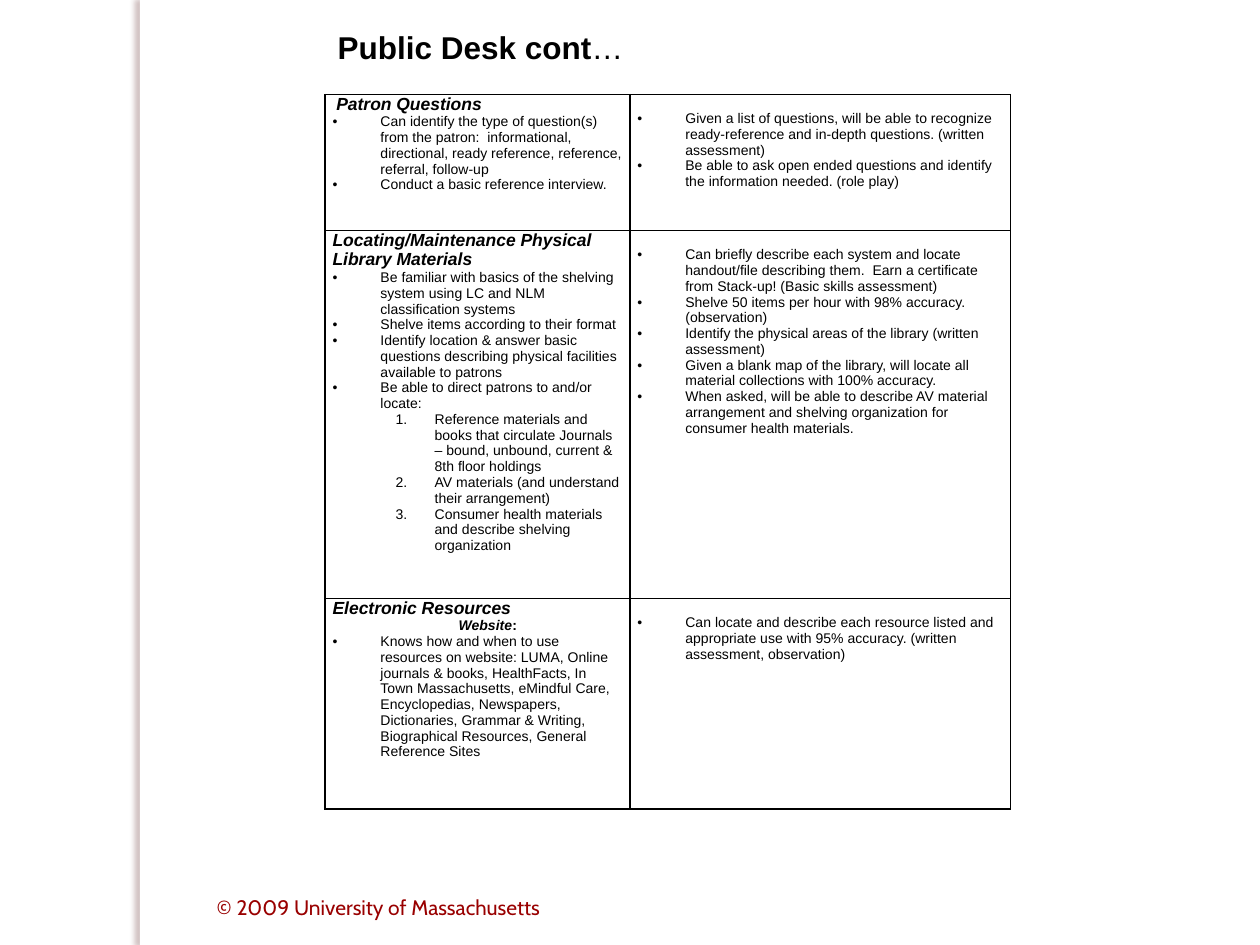
import dataclasses

import lxml.etree
import pptx
import pptx.dml.color
import pptx.enum.shapes
import pptx.enum.text
import pptx.oxml.ns
import pptx.util

Inches = pptx.util.Inches
qn = pptx.oxml.ns.qn


@dataclasses.dataclass(frozen=True)
class Theme:
    ink: str = "000000"
    paper: str = "FFFFFF"
    red: str = "990000"
    shade: str = "511616"
    font: str = "Arial"
    credit: str = "Cabin"
    title: int = 18
    foot: int = 12
    head: int = 10
    body: int = 8


# Paragraph kinds: left margin, first-line indent, bullet tag and its values
KINDS = {
    "plain": (0, 0, None, {}),
    "inset": (0.03, 0, None, {}),
    "sub": (1, 0, None, {}),
    "dot": (0.38, -0.38, "a:buChar", {"char": "•"}),
    "num": (0.81, -0.31, "a:buAutoNum", {"type": "arabicPeriod"}),
}

# Table rows: head kind, head, left items, right items
ROWS = [
    ("inset", "Patron Questions",
     [("dot", "Can identify the type of question(s) from the patron:  informational, "
              "directional, ready reference, reference, referral, follow-up"),
      ("dot", "Conduct a basic reference interview.")],
     ["Given a list of questions, will be able to recognize ready-reference and "
      "in-depth questions. (written assessment)",
      "Be able to ask open ended questions and identify the information needed. "
      "(role play)"]),
    ("plain", "Locating/Maintenance Physical Library Materials",
     [("dot", "Be familiar with basics of the shelving system using LC and NLM "
              "classification systems"),
      ("dot", "Shelve items according to their format"),
      ("dot", "Identify location & answer basic questions describing physical "
              "facilities available to patrons"),
      ("dot", "Be able to direct patrons to and/or locate:"),
      ("num", "Reference materials and books that circulate Journals – bound, "
              "unbound, current & 8th floor holdings"),
      ("num", "AV materials (and understand their arrangement)"),
      ("num", "Consumer health materials and describe shelving organization")],
     ["Can briefly describe each system and locate handout/file describing them.  "
      "Earn a certificate from Stack-up! (Basic skills assessment)",
      "Shelve 50 items per hour with 98% accuracy. (observation)",
      "Identify the physical areas of the library (written assessment)",
      "Given a blank map of the library, will locate all material collections "
      "with 100% accuracy.",
      "When asked, will be able to describe AV material arrangement and shelving "
      "organization for consumer health materials."]),
    ("plain", "Electronic Resources",
     [("sub", "Website"),
      ("dot", "Knows how and when to use resources on website: LUMA, Online journals "
              "& books, HealthFacts, In Town Massachusetts, eMindful Care, "
              "Encyclopedias, Newspapers, Dictionaries, Grammar & Writing, "
              "Biographical Resources, General Reference Sites")],
     ["Can locate and describe each resource listed and appropriate use with 95% "
      "accuracy. (written assessment, observation)"]),
]


def add(root, tag, **vals):
    return lxml.etree.SubElement(root, qn(tag), {k: str(v) for k, v in vals.items()})


class Deck:
    def __init__(self, prs, theme):
        self.theme = theme
        self.slide = prs.slides.add_slide(prs.slide_layouts[5])

    def style(self, font, **vals):
        base = {"name": self.theme.font, "size": self.theme.body,
                "bold": False, "italic": False}
        tint = vals.pop("color", self.theme.ink)
        for key, val in {**base, **vals}.items():
            setattr(font, key, pptx.util.Pt(val) if key == "size" else val)
        font.color.rgb = pptx.dml.color.RGBColor.from_string(tint)

    def text(self, para, words, **vals):
        run = para.add_run()
        run.text = words
        self.style(run.font, **vals)

    def frame(self, frame, **vals):
        for key, val in vals.items():
            setattr(frame, key, val)

    def title(self, box, words, tail):
        shape = self.slide.shapes.title
        shape.left, shape.top, shape.width, shape.height = map(Inches, box)
        self.frame(shape.text_frame, word_wrap=True,
                   auto_size=pptx.enum.text.MSO_AUTO_SIZE.NONE,
                   vertical_anchor=pptx.enum.text.MSO_ANCHOR.TOP)
        para = shape.text_frame.paragraphs[0]
        para.alignment = pptx.enum.text.PP_ALIGN.LEFT
        self.text(para, words, size=self.theme.title, bold=True)
        self.text(para, tail, size=self.theme.title)

    def bar(self, box):
        rect = pptx.enum.shapes.MSO_SHAPE.RECTANGLE
        shape = self.slide.shapes.add_shape(rect, *map(Inches, box))
        shape.fill.solid()
        shape.fill.fore_color.rgb = pptx.dml.color.RGBColor.from_string(self.theme.paper)
        shape.line.fill.background()
        # Soft shadow cast to the left
        shape.shadow.inherit = False
        glow = add(shape.element.spPr.find(qn("a:effectLst")), "a:outerShdw",
                   blurRad=pptx.util.Pt(3), dist=pptx.util.Pt(3), dir=180 * 60000,
                   algn="ctr", rotWithShape=0)
        add(add(glow, "a:srgbClr", val=self.theme.shade), "a:alpha", val=25000)

    def foot(self, box, words):
        frame = self.slide.shapes.add_textbox(*map(Inches, box)).text_frame
        self.frame(frame, word_wrap=True, margin_left=Inches(0.14),
                   vertical_anchor=pptx.enum.text.MSO_ANCHOR.BOTTOM)
        self.text(frame.paragraphs[0], words, name=self.theme.credit,
                  size=self.theme.foot, color=self.theme.red)

    def indent(self, para, kind):
        left, first, tag, vals = KINDS[kind]
        props = para._p.get_or_add_pPr()
        props.set("marL", str(Inches(left)))
        props.set("indent", str(Inches(first)))
        if kind == "num":
            para.level = 1
        if tag:
            add(props, "a:buFont", typeface=self.theme.font)
            add(props, tag, **vals)

    def edge(self, cell):
        props = cell._tc.get_or_add_tcPr()
        for side in ("L", "R", "T", "B"):
            line = add(props, f"a:ln{side}", w=pptx.util.Pt(1))
            add(add(line, "a:solidFill"), "a:srgbClr", val=self.theme.ink)

    def cell(self, cell, items, top=0):
        self.edge(cell)
        cell.fill.background()
        self.frame(cell, margin_left=Inches(0.06), margin_right=Inches(0.06),
                   margin_top=Inches(top), margin_bottom=0)
        frame = cell.text_frame
        for i, (kind, words, vals) in enumerate(items):
            para = frame.add_paragraph() if i else frame.paragraphs[0]
            self.indent(para, kind)
            self.text(para, words, **vals)
            if kind == "sub":
                self.text(para, ":", bold=True)

    def table(self, box, cols, highs, rows):
        grid = self.slide.shapes.add_table(len(rows), len(cols), *map(Inches, box)).table
        grid.first_row = grid.horz_banding = False
        for col, wide in zip(grid.columns, cols):
            col.width = Inches(wide)
        strong = {"bold": True, "italic": True}
        for i, (kind, head, left, right) in enumerate(rows):
            grid.rows[i].height = Inches(highs[i])
            items = [(kind, head, {"size": self.theme.head, **strong})]
            items += [(k, t, strong if k == "sub" else {}) for k, t in left]
            self.cell(grid.cell(i, 0), items)
            # Right lists start one body line lower
            self.cell(grid.cell(i, 1), [("dot", t, {}) for t in right], top=0.13)


def main():
    prs = pptx.Presentation()
    prs.slide_width, prs.slide_height = Inches(10), Inches(7.5)
    deck = Deck(prs, Theme())
    # Side bar and footer
    deck.bar((1.11, 0, 0.08, 7.5))
    deck.foot((1.58, 6.83, 3.92, 0.52), "© 2009 University of Massachusetts")
    # Skills table and title
    deck.table((2.58, 0.75, 5.44, 5.67), (2.42, 3.02), (1.08, 2.92, 1.67), ROWS)
    deck.title((2.58, 0.17, 2.58, 0.4), "Public Desk cont", "…")
    prs.save("out.pptx")


if __name__ == "__main__":
    main()
